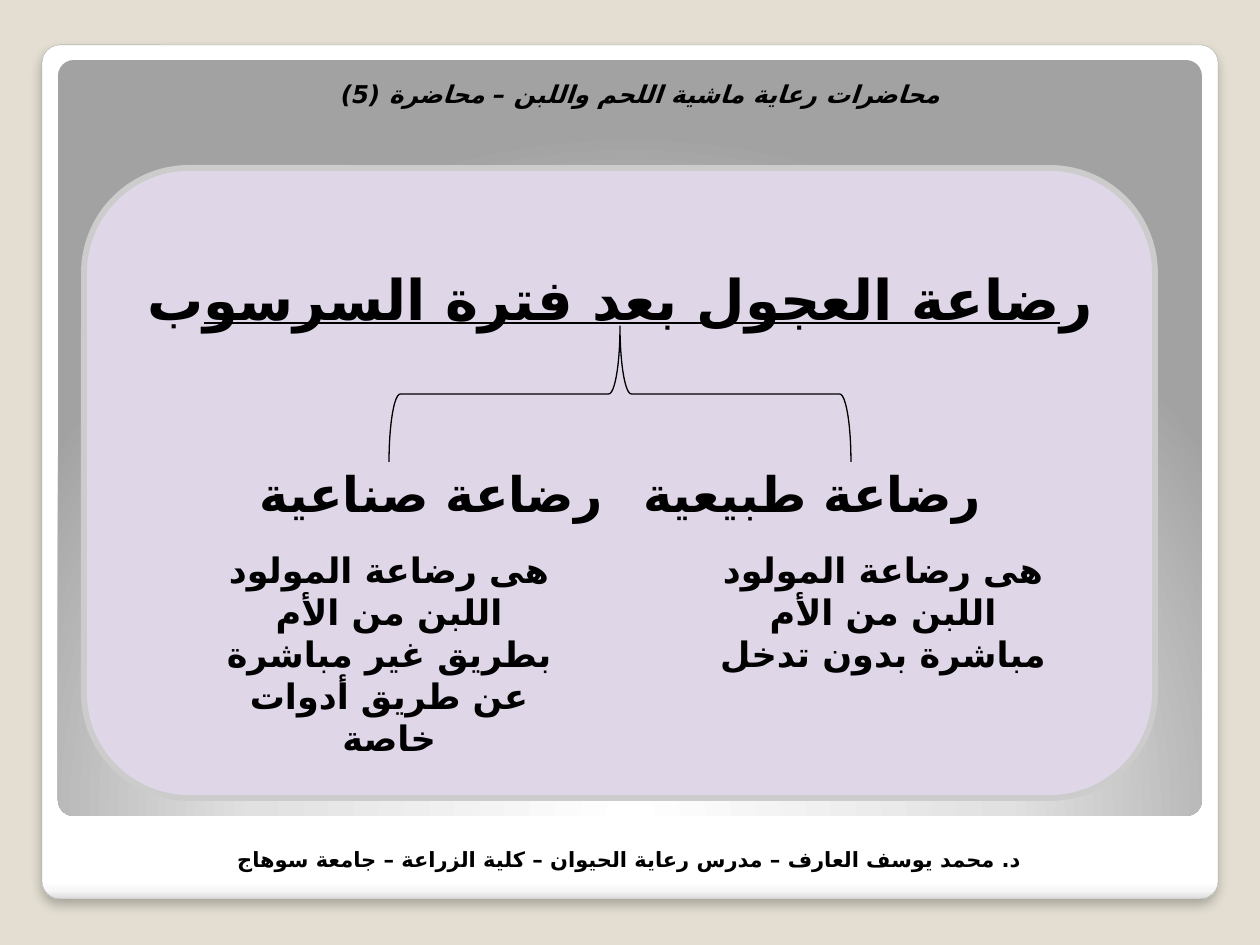
from dataclasses import dataclass

from lxml import etree
from pptx import Presentation
from pptx.dml.color import RGBColor
from pptx.enum.shapes import MSO_SHAPE
from pptx.enum.text import MSO_ANCHOR, PP_ALIGN
from pptx.oxml.ns import qn
from pptx.util import Emu, Inches, Pt

ROUNDED = MSO_SHAPE.ROUNDED_RECTANGLE
BRACE = MSO_SHAPE.RIGHT_BRACE
CENTER = PP_ALIGN.CENTER
TOP = MSO_ANCHOR.TOP
PX_PER_INCH = 126


@dataclass(frozen=True)
class Theme:
    background: str = "E3DED1"
    ink: str = "000000"
    card_line: str = "A4A4A4"
    box_fill: str = "DFD7E7"
    box_line: str = "CCCCCC"
    card_stops: tuple = ((0, "FFFFFF"), (98, "FFFFFF"), (99, "F7F7F7"), (100, "DADADA"))
    panel_stops: tuple = ((0, "FFFFFF"), (55, "E1E1E1"), (100, "A2A2A2"))
    body_font: str = "Times New Roman"
    header_font: str = "Vollkorn"
    footer_font: str = "DejaVu Sans"
    arabic_font: str = "DejaVu Sans"
    title_size: int = 32
    branch_size: int = 28
    detail_size: int = 20
    header_size: int = 14
    footer_size: int = 12


THEME = Theme()


def px(length):
    return Emu(round(length * Inches(1) / PX_PER_INCH))


def add_child(parent, tag, **attributes):
    values = {name: str(value) for name, value in attributes.items()}
    return etree.SubElement(parent, qn(tag), values)


def add_outline_shape(slide, kind, box, fill=None, line=None, width=0, corner=None):
    shape = slide.shapes.add_shape(kind, *map(px, box))
    shape.shadow.inherit = False
    if corner is not None:
        shape.adjustments[0] = corner
    if fill:
        shape.fill.solid()
        shape.fill.fore_color.rgb = RGBColor.from_string(fill)
    else:
        shape.fill.background()
    if line:
        shape.line.color.rgb = RGBColor.from_string(line)
        shape.line.width = Pt(width)
    else:
        shape.line.fill.background()
    return shape


def set_gradient(shape, stops):
    shape.fill.gradient()
    gradient = shape._element.spPr.find(qn("a:gradFill"))
    for child in list(gradient):
        gradient.remove(child)
    stop_list = add_child(gradient, "a:gsLst")
    for position, color in stops:
        stop = add_child(stop_list, "a:gs", pos=position * 1000)
        add_child(stop, "a:srgbClr", val=color)
    return gradient


def add_card(slide):
    card = add_outline_shape(
        slide, ROUNDED, (42, 45, 1176, 854), line=THEME.card_line, width=0.16, corner=0.021
    )
    gradient = set_gradient(card, THEME.card_stops)
    add_child(gradient, "a:lin", ang=5400000, scaled=0)
    effects = card._element.spPr.find(qn("a:effectLst"))
    shadow = add_child(
        effects, "a:outerShdw", blurRad=Pt(6), dist=Pt(4), dir=5400000, rotWithShape=0
    )
    color = add_child(shadow, "a:srgbClr", val=THEME.ink)
    add_child(color, "a:alpha", val=25000)


def add_panel(slide):
    panel = add_outline_shape(slide, ROUNDED, (58, 60, 1144, 756), corner=0.021)
    gradient = set_gradient(panel, THEME.panel_stops)
    focus = add_child(gradient, "a:path", path="circle")
    add_child(focus, "a:fillToRect", l=50000, t=175000, r=50000, b=-75000)


def add_text(slide, box, runs, font_name, size, italic=None):
    frame = slide.shapes.add_textbox(*map(px, box)).text_frame
    frame.word_wrap = True
    frame.vertical_anchor = TOP
    paragraph = frame.paragraphs[0]
    paragraph.alignment = CENTER
    paragraph.space_before = Pt(2.5)
    font = paragraph.font
    font.name = font_name
    font.size = Pt(size)
    font.bold = True
    font.italic = italic
    font.color.rgb = RGBColor.from_string(THEME.ink)
    properties = paragraph._p.get_or_add_pPr()
    add_child(properties.find(qn("a:defRPr")), "a:cs", typeface=THEME.arabic_font)
    for text, underlined in runs:
        run = paragraph.add_run()
        run.text = text
        if underlined:
            run.font.underline = True
    return frame, properties


def add_caption(slide, box, text, font_name, size, italic=None):
    _, properties = add_text(slide, box, [(text, False)], font_name, size, italic)
    properties.set("marL", str(Inches(0.29)))
    properties.set("indent", str(-Inches(0.29)))


def add_body(slide, box, runs, size):
    frame, properties = add_text(slide, box, runs, THEME.body_font, size)
    frame.margin_left = Inches(0.2)
    frame.margin_top = frame.margin_right = Inches(0.1)
    frame.margin_bottom = Inches(0.05)
    properties.set("marL", str(Inches(0.18)))
    properties.set("indent", "0")
    properties.set("rtl", "1")


def main():
    presentation = Presentation()
    presentation.slide_width = Inches(10)
    presentation.slide_height = Inches(7.5)
    slide = presentation.slides.add_slide(presentation.slide_layouts[6])
    slide.background.fill.solid()
    slide.background.fill.fore_color.rgb = RGBColor.from_string(THEME.background)

    add_card(slide)
    add_panel(slide)
    add_caption(
        slide,
        (94, 840, 1071, 63),
        "د. محمد يوسف العارف – مدرس رعاية الحيوان – كلية الزراعة – جامعة سوهاج",
        THEME.footer_font,
        THEME.footer_size,
    )
    add_outline_shape(
        slide, ROUNDED, (84, 168, 1071, 630), THEME.box_fill, THEME.box_line, 3.35
    )
    title_runs = [("ر", False), ("ضاعة العجول بعد فترة السرسو", True), ("ب", False)]
    add_body(slide, (116, 252, 1018, 95), title_runs, THEME.title_size)
    branch_runs = [("رضاعة طبيعية\t\tرضاعة صناعية", False)]
    add_body(slide, (116, 451, 1018, 95), branch_runs, THEME.branch_size)
    brace = add_outline_shape(slide, BRACE, (552, 163, 136, 462), line=THEME.ink, width=0.75)
    brace.rotation = 270
    details = (
        (683, "هى رضاعة المولود اللبن من الأم مباشرة بدون تدخل"),
        (189, "هى رضاعة المولود اللبن من الأم بطريق غير مباشرة عن طريق أدوات خاصة"),
    )
    for left, text in details:
        add_body(slide, (left, 536, 410, 189), [(text, False)], THEME.detail_size)
    add_caption(
        slide,
        (105, 73, 1071, 63),
        "محاضرات رعاية ماشية اللحم واللبن – محاضرة (5)",
        THEME.header_font,
        THEME.header_size,
        italic=True,
    )
    presentation.save("out.pptx")


if __name__ == "__main__":
    main()
